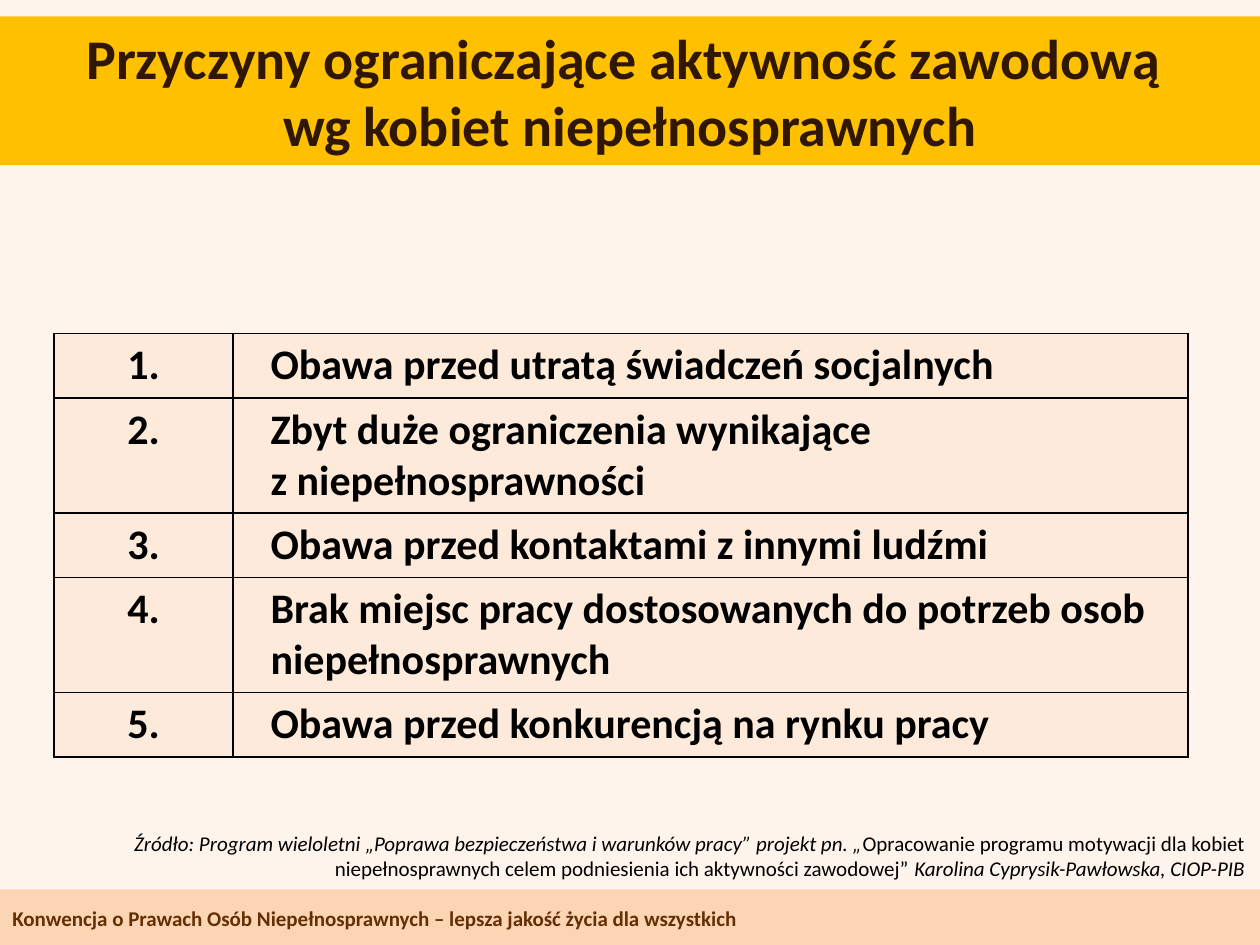
from lxml.etree import SubElement
from pptx import Presentation
from pptx.dml.color import RGBColor
from pptx.enum.shapes import MSO_SHAPE
from pptx.enum.text import MSO_ANCHOR, PP_ALIGN
from pptx.oxml.ns import qn
from pptx.util import Cm, Pt

CREAM = RGBColor(0xFE, 0xF4, 0xEC)
PEACH = RGBColor(0xFD, 0xEA, 0xDA)
APRICOT = RGBColor(0xFC, 0xD5, 0xB5)
GOLD = RGBColor(0xFF, 0xC0, 0x00)
DARK = RGBColor(0x30, 0x17, 0x02)
BROWN = RGBColor(0x64, 0x2F, 0x04)
BLACK = RGBColor(0x00, 0x00, 0x00)

WIDTH = 25.4
LINE = 1.02  # height of one table text line
PAD = 0.28   # extra height of a table row

TITLE = "Przyczyny ograniczające aktywność zawodową \nwg kobiet niepełnosprawnych"
FOOTER = "Konwencja o Prawach Osób Niepełnosprawnych – lepsza jakość życia dla wszystkich"
CAUSES = [
    ("Obawa przed utratą świadczeń socjalnych", 1),
    ("Zbyt duże ograniczenia wynikające \nz niepełnosprawności", 2),
    ("Obawa przed kontaktami z innymi ludźmi", 1),
    ("Brak miejsc pracy dostosowanych do potrzeb osob niepełnosprawnych", 2),
    ("Obawa przed konkurencją na rynku pracy", 1),
]
SOURCE = [
    ("Źródło: Program wieloletni „Poprawa bezpieczeństwa i warunków pracy” projekt pn. „", True),
    ("Opracowanie programu motywacji dla kobiet niepełnosprawnych "
     "celem podniesienia ich aktywności zawodowej”", False),
    (" Karolina Cyprysik-Pawłowska, CIOP-PIB", True),
]


class Page:
    def __init__(self, slide, font="Calibri"):
        self.slide = slide
        self.font = font

    def run(self, para, text, size, color, bold=False, italic=False):
        """Add text to a paragraph, with a line break at each newline."""
        for i, part in enumerate(text.split("\n")):
            if i:
                para.add_line_break()
            run = para.add_run()
            run.text = part
            font = run.font
            font.name, font.size = self.font, Pt(size)
            font.bold, font.italic = bold, italic
            font.color.rgb = color

    def band(self, top, height, color):
        shape = self.slide.shapes.add_shape(
            MSO_SHAPE.RECTANGLE, 0, Cm(top), Cm(WIDTH), Cm(height))
        shape.shadow.inherit = False
        shape.fill.solid()
        shape.fill.fore_color.rgb = color
        shape.line.fill.background()
        return shape.text_frame

    def box(self, top, width, height):
        shape = self.slide.shapes.add_textbox(0, Cm(top), Cm(width), Cm(height))
        return shape.text_frame

    def para(self, frame, align):
        frame.word_wrap = True
        frame.vertical_anchor = MSO_ANCHOR.MIDDLE
        para = frame.paragraphs[0]
        para.alignment = align
        return para

    def cell(self, cell, text, align, indent=0):
        props = cell._tc.get_or_add_tcPr()
        for side in ("a:lnL", "a:lnR", "a:lnT", "a:lnB"):
            line = SubElement(props, qn(side), w=str(Pt(1)))
            fill = SubElement(line, qn("a:solidFill"))
            SubElement(fill, qn("a:srgbClr"), val=str(BLACK))
        cell.fill.solid()
        cell.fill.fore_color.rgb = PEACH
        para = cell.text_frame.paragraphs[0]
        para.alignment = align
        if indent:
            para._p.get_or_add_pPr().set("marL", str(Cm(indent)))
        self.run(para, text, 24, BLACK, bold=True)

    def table(self, left, top, widths, causes):
        """Draw a numbered table; each cause comes with its line count."""
        heights = [PAD + LINE * lines for _, lines in causes]
        frame = self.slide.shapes.add_table(
            len(causes), len(widths), Cm(left), Cm(top),
            Cm(sum(widths)), Cm(sum(heights)))
        table = frame.table
        table.first_row = table.horz_banding = False
        for col, width in zip(table.columns, widths):
            col.width = Cm(width)
        for i, (text, _) in enumerate(causes):
            table.rows[i].height = Cm(heights[i])
            self.cell(table.cell(i, 0), f"{i + 1}.", PP_ALIGN.CENTER)
            self.cell(table.cell(i, 1), text, PP_ALIGN.LEFT, 0.5)


def main():
    deck = Presentation()
    deck.slide_width, deck.slide_height = Cm(WIDTH), Cm(19.05)
    slide = deck.slides.add_slide(deck.slide_layouts[6])
    slide.background.fill.solid()
    slide.background.fill.fore_color.rgb = CREAM
    page = Page(slide)

    page.band(17.93, 1.12, APRICOT)
    foot = page.para(page.box(18.11, WIDTH, 0.79), PP_ALIGN.LEFT)
    page.run(foot, FOOTER, 12, BROWN, bold=True)

    head = page.para(page.band(0.33, 3, GOLD), PP_ALIGN.CENTER)
    page.run(head, TITLE, 32, DARK, bold=True)

    page.table(1.09, 6.72, [3.61, 19.25], CAUSES)

    note = page.para(page.box(16.61, 25.35, 1.27), PP_ALIGN.RIGHT)
    for text, italic in SOURCE:
        page.run(note, text, 12, BLACK, italic=italic)

    deck.save("out.pptx")


if __name__ == "__main__":
    main()
